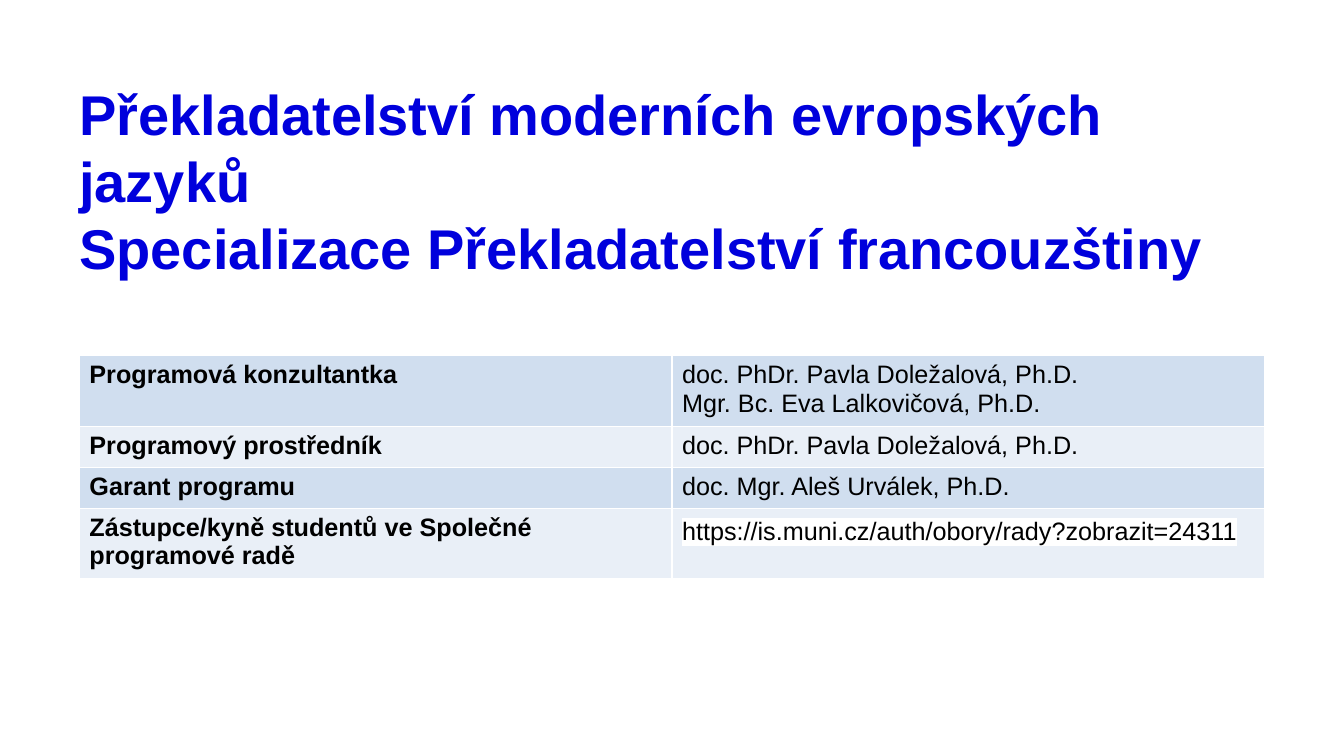
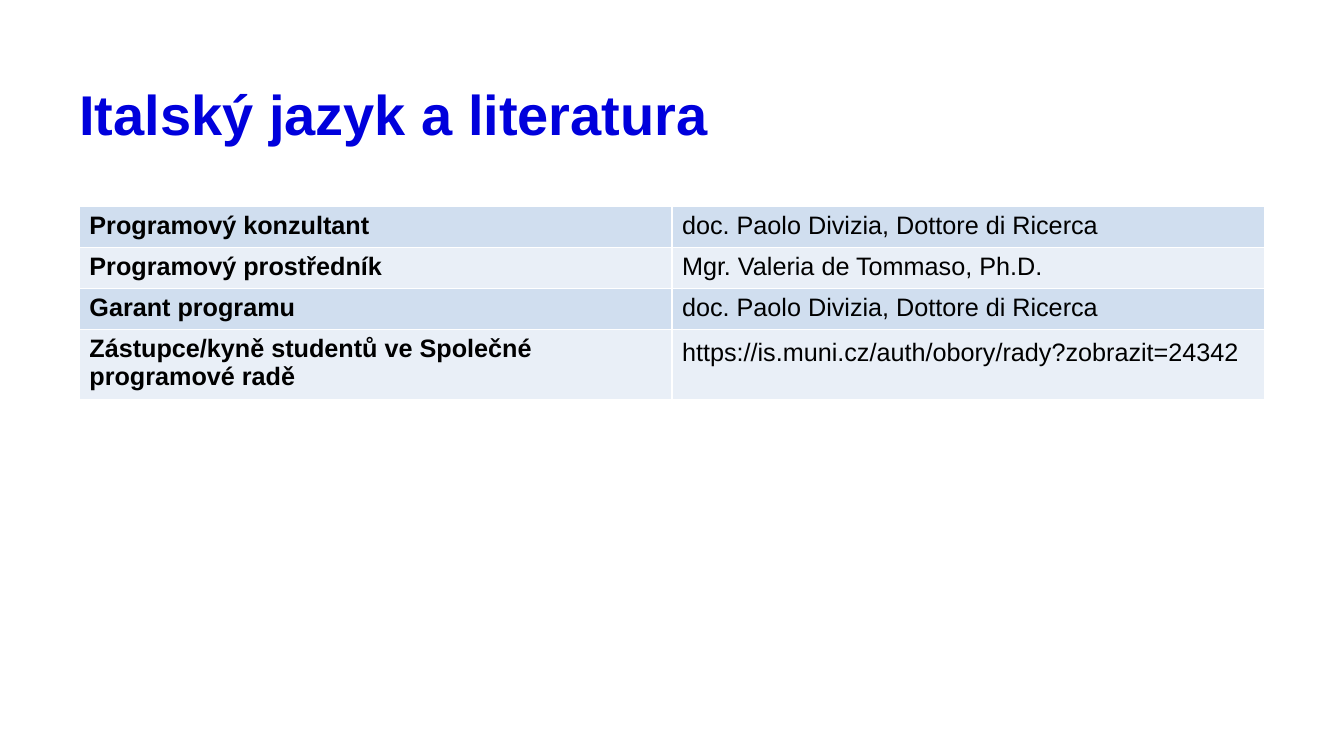
from lxml import etree
from pptx import Presentation
from pptx.dml.color import RGBColor
from pptx.enum import text
from pptx.oxml import ns
from pptx.util import Pt

FONT = "Arial"
TITLE_COLOR, TEXT_COLOR, WHITE = "0000DC", "000000", "FFFFFF"
BANDS = ("D0DEEF", "E9EFF7")
LEFT, TITLE_TOP, WIDTH = 56.7, 56.7, 846.6
TITLE_LINE, ROW_HEIGHT = 48, 29.2

SLIDES = [
    dict(
        title=["Překladatelství moderních evropských jazyků",
               "Specializace Překladatelství francouzštiny"],
        title_height=153.4,
        table_top=254.2,
        rows=[
            ("Programová konzultantka",
             ["doc. PhDr. Pavla Doležalová, Ph.D.", "Mgr. Bc. Eva Lalkovičová, Ph.D."]),
            ("Programový prostředník", ["doc. PhDr. Pavla Doležalová, Ph.D."]),
            ("Garant programu", ["doc. Mgr. Aleš Urválek, Ph.D."]),
        ],
        council="https://is.muni.cz/auth/obory/rady?zobrazit=24311",
        highlight=WHITE,
    ),
    dict(
        title=["Italský jazyk a literatura"],
        title_height=35.3,
        table_top=147.6,
        rows=[
            ("Programový konzultant", ["doc. Paolo Divizia, Dottore di Ricerca"]),
            ("Programový prostředník", ["Mgr. Valeria de Tommaso, Ph.D."]),
            ("Garant programu", ["doc. Paolo Divizia, Dottore di Ricerca"]),
        ],
        council="https://is.muni.cz/auth/obory/rady?zobrazit=24342",
        highlight=None,
    ),
]
COUNCIL_LABEL = "Zástupce/kyně studentů ve Společné programové radě"


def rgb(color):
    return RGBColor.from_string(color)


def write(tf, lines, size, color, bold):
    """Write one paragraph per line and return the paragraphs."""
    tf.word_wrap = True
    for i, line in enumerate(lines):
        p = tf.paragraphs[0] if i == 0 else tf.add_paragraph()
        r = p.add_run()
        r.text = line
        r.font.name, r.font.size, r.font.bold = FONT, Pt(size), bold
        r.font.color.rgb = rgb(color)
    return tf.paragraphs


def highlight_run(r, color):
    mark = etree.Element(ns.qn("a:highlight"))
    etree.SubElement(mark, ns.qn("a:srgbClr"), val=color)
    r.font._element.find(ns.qn("a:solidFill")).addnext(mark)


def style_cell(cell, fill):
    """Give the cell white 1 pt borders and a plain fill."""
    tc_pr = cell._tc.get_or_add_tcPr()
    for side in ("lnL", "lnR", "lnT", "lnB"):
        ln = etree.SubElement(tc_pr, ns.qn(f"a:{side}"), w=str(Pt(1)))
        solid = etree.SubElement(ln, ns.qn("a:solidFill"))
        etree.SubElement(solid, ns.qn("a:srgbClr"), val=WHITE)
    cell.fill.solid()
    cell.fill.fore_color.rgb = rgb(fill)


def add_title(s, lines, left, top, width, height):
    tf = s.shapes.add_textbox(Pt(left), Pt(top), Pt(width), Pt(height)).text_frame
    tf.margin_left = tf.margin_right = tf.margin_top = tf.margin_bottom = 0
    tf.vertical_anchor = text.MSO_ANCHOR.TOP
    for p in write(tf, lines, 40, TITLE_COLOR, True):
        p.line_spacing = Pt(TITLE_LINE)


def add_contacts(s, rows, left, top, width):
    """Add the two-column table of roles and people; return it."""
    table = s.shapes.add_table(len(rows), 2, Pt(left), Pt(top), Pt(width),
                               Pt(ROW_HEIGHT * len(rows))).table
    table.first_row = table.horz_banding = False
    for column in table.columns:
        column.width = Pt(width / 2)
    for i, (role, people) in enumerate(rows):
        table.rows[i].height = Pt(ROW_HEIGHT)
        for j, lines in enumerate(([role], people)):
            cell = table.cell(i, j)
            style_cell(cell, BANDS[i % 2])
            write(cell.text_frame, lines, 18, TEXT_COLOR, j == 0)
    return table


def add_program_slide(prs, title, title_height, table_top, rows, council, highlight):
    s = prs.slides.add_slide(prs.slide_layouts[6])
    add_title(s, title, LEFT, TITLE_TOP, WIDTH, title_height)
    rows = rows + [(COUNCIL_LABEL, [council])]
    table = add_contacts(s, rows, LEFT, table_top, WIDTH)
    p = table.cell(len(rows) - 1, 1).text_frame.paragraphs[0]
    p.line_spacing, p.space_after = 1.15, Pt(12)
    if highlight:
        highlight_run(p.runs[0], highlight)


def main():
    prs = Presentation()
    prs.slide_width, prs.slide_height = Pt(960), Pt(540)
    for program in SLIDES:
        add_program_slide(prs, **program)
    prs.save("out.pptx")


if __name__ == "__main__":
    main()
